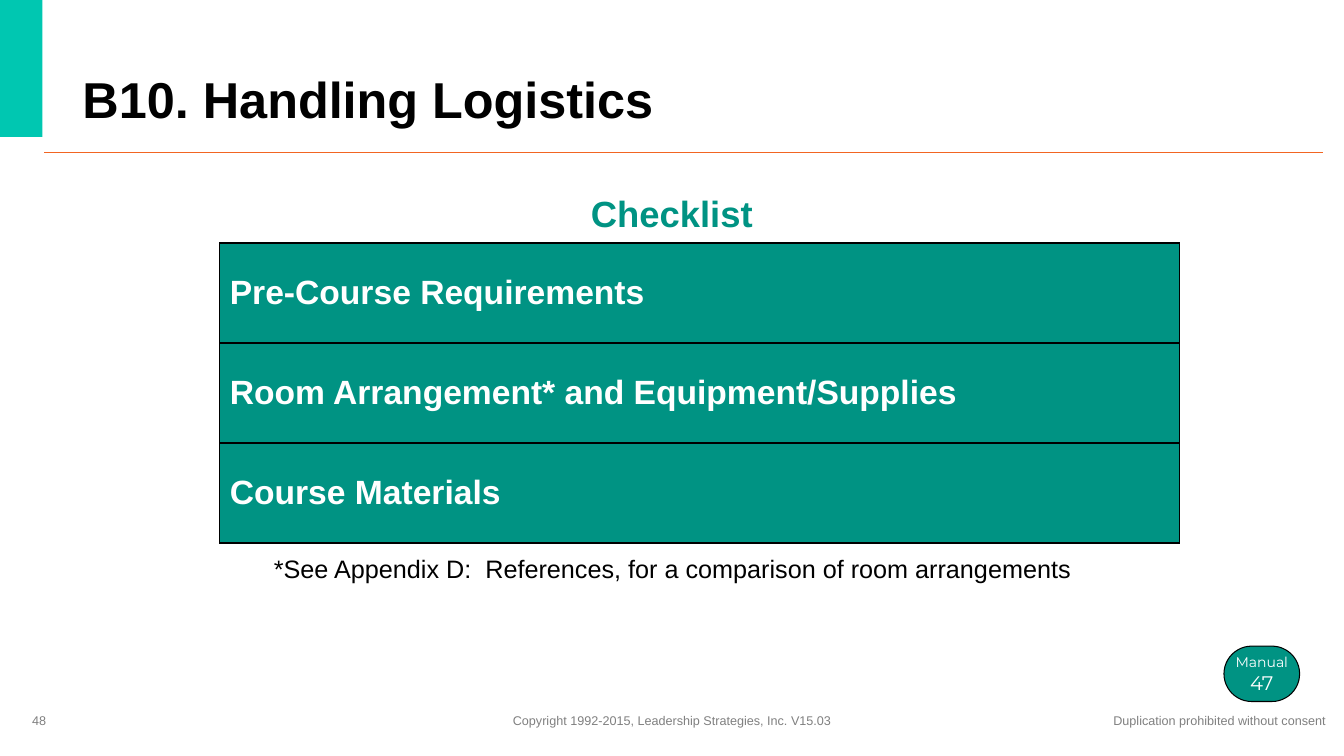
from dataclasses import dataclass

from lxml import etree
from pptx import Presentation
from pptx import util as u
from pptx.dml.color import RGBColor
from pptx.enum import shapes, text
from pptx.oxml.ns import qn


@dataclass(frozen=True)
class Theme:
    font: str = "Arial"
    badge_font: str = "Montserrat"
    teal: str = "009383"
    accent: str = "00C7B1"
    orange: str = "F26522"
    black: str = "000000"
    white: str = "FFFFFF"
    grey: str = "808080"
    title: int = 36
    heading: int = 26
    row: int = 24
    note: int = 18
    footer: int = 9
    badge_label: int = 10
    badge_page: int = 14


@dataclass(frozen=True)
class Box:
    """Left, top, width and height as percentages of the slide."""
    left: float
    top: float
    width: float
    height: float


@dataclass(frozen=True)
class Label:
    words: str
    box: Box
    size: int
    color: str
    bold: bool = False
    align: text.PP_ALIGN = text.PP_ALIGN.LEFT
    anchor: text.MSO_ANCHOR = text.MSO_ANCHOR.TOP
    spacing: float = 1.0
    wrap: bool = True


T = Theme()
SLIDE_W, SLIDE_H = u.Inches(13.33), u.Inches(7.5)
CENTER, MIDDLE = text.PP_ALIGN.CENTER, text.MSO_ANCHOR.MIDDLE

ACCENT_BAR = Box(0, 0, 3.15, 18.13)
TITLE_RULE = Box(3.3, 20.13, 95.12, 0)
CHECKLIST = Box(16.35, 32.13, 71.42, 39.7)
BADGE = Box(91.07, 85.47, 5.63, 7.33)

ROWS = (
    "Pre-Course Requirements",
    "Room Arrangement* and Equipment/Supplies",
    "Course Materials",
)
LABELS = (
    Label("B10. Handling Logistics", Box(5.4, 7.6, 79.07, 10.13), T.title, T.black,
          bold=True, anchor=text.MSO_ANCHOR.BOTTOM, spacing=0.9),
    Label("Checklist", Box(16.35, 25.33, 67.29, 9.2), T.heading, T.teal,
          bold=True, align=CENTER, spacing=0.9),
    Label("*See Appendix D:  References, for a comparison of room arrangements",
          Box(9, 72.93, 82.07, 12.67), T.note, T.black, align=CENTER, spacing=0.9),
    Label("48", Box(1.65, 92.67, 22.5, 5.33), T.footer, T.grey, anchor=MIDDLE),
    Label("Copyright 1992-2015, Leadership Strategies, Inc. V15.03",
          Box(37.28, 93.6, 25.43, 3.33), T.footer, T.grey, align=CENTER, wrap=False),
    Label("Duplication prohibited without consent",
          Box(82, 93.6, 17.48, 3.33), T.footer, T.grey, align=CENTER, wrap=False),
)


def place(box: Box) -> tuple[int, int, int, int]:
    """Turn percentages into slide lengths."""
    return (round(SLIDE_W * box.left / 100), round(SLIDE_H * box.top / 100),
            round(SLIDE_W * box.width / 100), round(SLIDE_H * box.height / 100))


def style_run(r, size: int, color: str, bold: bool = False, font: str = T.font) -> None:
    r.font.name, r.font.size, r.font.bold = font, u.Pt(size), bold
    r.font.color.rgb = RGBColor.from_string(color)


def add_label(slide, label: Label) -> None:
    tf = slide.shapes.add_textbox(*place(label.box)).text_frame
    tf.word_wrap, tf.vertical_anchor = label.wrap, label.anchor
    tf.text = label.words
    p = tf.paragraphs[0]
    p.alignment, p.line_spacing = label.align, label.spacing
    style_run(p.runs[0], label.size, label.color, label.bold)


def add_filled(slide, kind: shapes.MSO_SHAPE, box: Box, color: str):
    sp = slide.shapes.add_shape(kind, *place(box))
    sp.shadow.inherit = False
    sp.fill.solid()
    sp.fill.fore_color.rgb = RGBColor.from_string(color)
    sp.line.fill.background()
    return sp


def add_rule(slide, box: Box) -> None:
    left, top, width, height = place(box)
    line = slide.shapes.add_connector(
        shapes.MSO_CONNECTOR.STRAIGHT, left, top, left + width, top + height)
    line.line.color.rgb = RGBColor.from_string(T.orange)
    line.line.width = u.Pt(0.5)
    etree.SubElement(line._element.spPr, qn("a:effectLst"))


def add_badge(slide, box: Box) -> None:
    sp = add_filled(slide, shapes.MSO_SHAPE.ROUNDED_RECTANGLE, box, T.teal)
    sp.adjustments[0] = 0.5
    sp.line.color.rgb = RGBColor.from_string(T.black)
    sp.line.width = u.Pt(0.75)
    tf = sp.text_frame
    tf.word_wrap, tf.vertical_anchor = False, MIDDLE
    p = tf.paragraphs[0]
    p.text = "Manual\v47"
    p.alignment = CENTER
    for r, size in zip(p.runs, (T.badge_label, T.badge_page)):
        style_run(r, size, T.white, font=T.badge_font)
    line_break = p._p.find(qn("a:br"))
    etree.SubElement(line_break, qn("a:rPr"), sz=str(T.badge_label * 100))


def add_borders(cell) -> None:
    """Outline a cell; borders must come before its fill."""
    tc_pr = cell._tc.get_or_add_tcPr()
    for i, side in enumerate(("lnL", "lnR", "lnT", "lnB")):
        ln = etree.Element(qn(f"a:{side}"), w=str(u.Pt(1)))
        fill = etree.SubElement(ln, qn("a:solidFill"))
        etree.SubElement(fill, qn("a:srgbClr"), val=T.black)
        tc_pr.insert(i, ln)


def add_checklist(slide, box: Box, rows: tuple[str, ...]) -> None:
    table = slide.shapes.add_table(len(rows), 1, *place(box)).table
    table.first_row = table.horz_banding = False
    for i, words in enumerate(rows):
        cell = table.cell(i, 0)
        cell.fill.solid()
        cell.fill.fore_color.rgb = RGBColor.from_string(T.teal)
        cell.vertical_anchor = MIDDLE
        cell.text_frame.text = words
        style_run(cell.text_frame.paragraphs[0].runs[0], T.row, T.white, bold=True)
        add_borders(cell)


def main() -> None:
    prs = Presentation()
    prs.slide_width, prs.slide_height = SLIDE_W, SLIDE_H
    slide = prs.slides.add_slide(prs.slide_layouts[6])
    add_filled(slide, shapes.MSO_SHAPE.RECTANGLE, ACCENT_BAR, T.accent)
    add_rule(slide, TITLE_RULE)
    for label in LABELS:
        add_label(slide, label)
    add_badge(slide, BADGE)
    add_checklist(slide, CHECKLIST, ROWS)
    prs.save("out.pptx")


if __name__ == "__main__":
    main()
